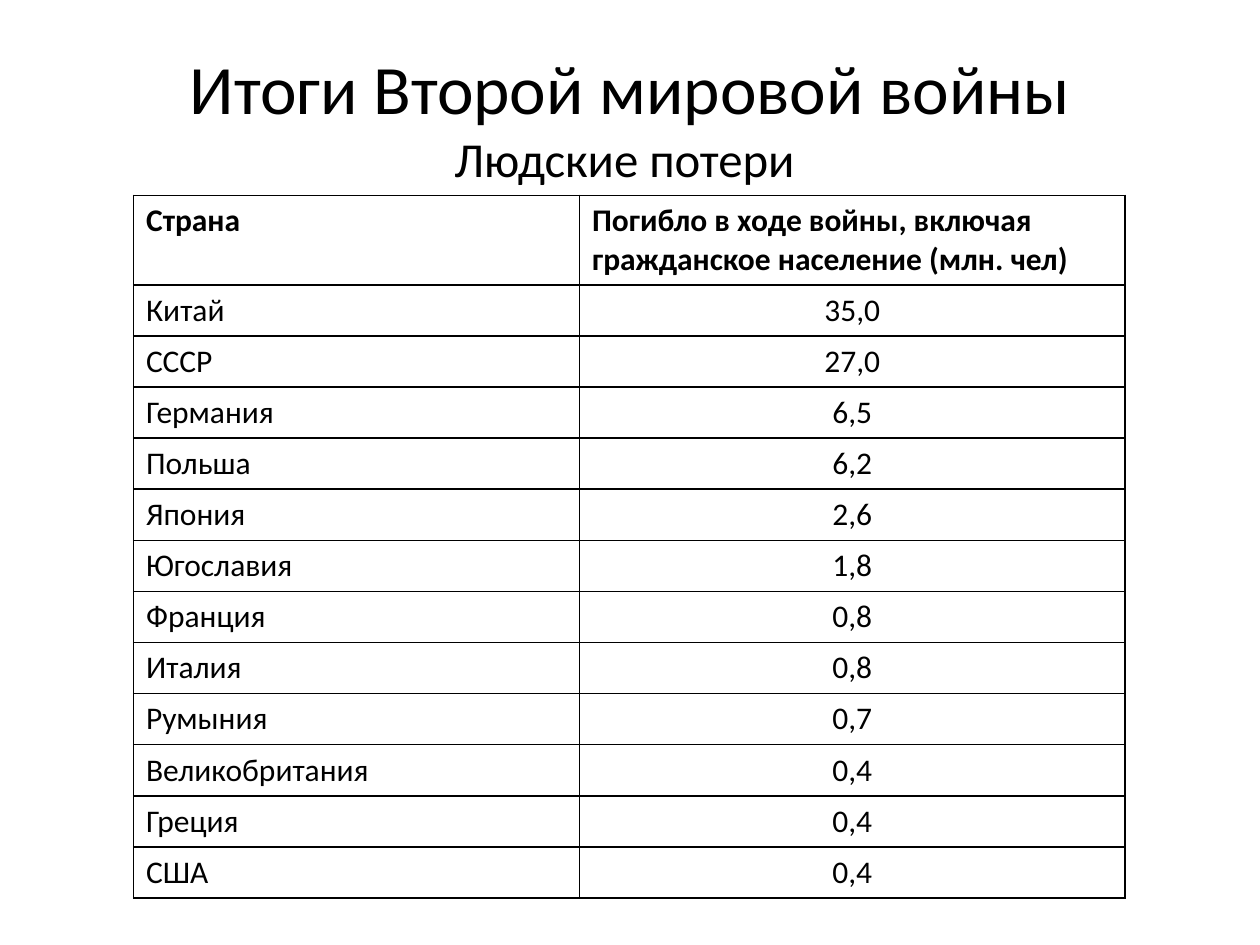
from pptx import Presentation
from pptx import util as u
from pptx.dml.color import RGBColor
from pptx.enum import text
from pptx.oxml import ns
from lxml import etree

INK = "000000"
FONT = "Calibri"
HEAD = [("Итоги Второй мировой войны", 39.6), ("Людские потери ", 27.9)]
COLS = [3.54, 4.33]
TOP = ("Страна", "Погибло в ходе войны, включая гражданское население (млн. чел)")
ROWS = [
    ("Китай", "35,0"),
    ("СССР", "27,0"),
    ("Германия", "6,5"),
    ("Польша", "6,2"),
    ("Япония", "2,6"),
    ("Югославия", "1,8"),
    ("Франция", "0,8"),
    ("Италия", "0,8"),
    ("Румыния", "0,7"),
    ("Великобритания", "0,4"),
    ("Греция", "0,4"),
    ("США", "0,4"),
]
TALL, HIGH = 0.71, 5.57


def paint(fill, hue):
    fill.solid()
    fill.fore_color.rgb = RGBColor.from_string(hue)


def write(para, words, size, bold=False):
    run = para.add_run()
    run.text = words
    run.font.name = FONT
    run.font.size = u.Pt(size)
    run.font.bold = bold
    paint(run.font.fill, INK)


def edge(cell):
    props = cell._tc.get_or_add_tcPr()
    for side in "LRTB":
        line = etree.SubElement(props, ns.qn(f"a:ln{side}"), w=str(u.Pt(1)))
        fill = etree.SubElement(line, ns.qn("a:solidFill"))
        etree.SubElement(fill, ns.qn("a:srgbClr"), val=INK)


def add_title(slide):
    title = slide.shapes.title
    title.left, title.top, title.width, title.height = map(u.Inches, (0.5, 0.3, 9, 1.25))
    frame = title.text_frame
    frame.word_wrap = True
    frame.auto_size = text.MSO_AUTO_SIZE.NONE
    frame.vertical_anchor = text.MSO_ANCHOR.MIDDLE
    para = frame.paragraphs[0]
    para.alignment = text.PP_ALIGN.CENTER
    for i, (words, size) in enumerate(HEAD):
        if i:
            para.add_line_break()
        write(para, words, size)


def add_grid(slide):
    data = [TOP] + ROWS
    box = map(u.Inches, (1.06, 1.55, sum(COLS), HIGH))
    grid = slide.shapes.add_table(len(data), len(COLS), *box).table
    grid.horz_banding = False
    for col, wide in zip(grid.columns, COLS):
        col.width = u.Inches(wide)
    step = (HIGH - TALL) / len(ROWS)
    for r, row in enumerate(data):
        grid.rows[r].height = u.Inches(step if r else TALL)
        for c, words in enumerate(row):
            cell = grid.cell(r, c)
            edge(cell)
            paint(cell.fill, "FFFFFF")
            para = cell.text_frame.paragraphs[0]
            para.alignment = text.PP_ALIGN.CENTER if r and c else text.PP_ALIGN.LEFT
            write(para, words, 18, bold=r == 0)


def main():
    deck = Presentation()
    deck.slide_width, deck.slide_height = u.Inches(10), u.Inches(7.5)
    slide = deck.slides.add_slide(deck.slide_layouts[5])
    add_title(slide)
    add_grid(slide)
    deck.save("out.pptx")


if __name__ == "__main__":
    main()
